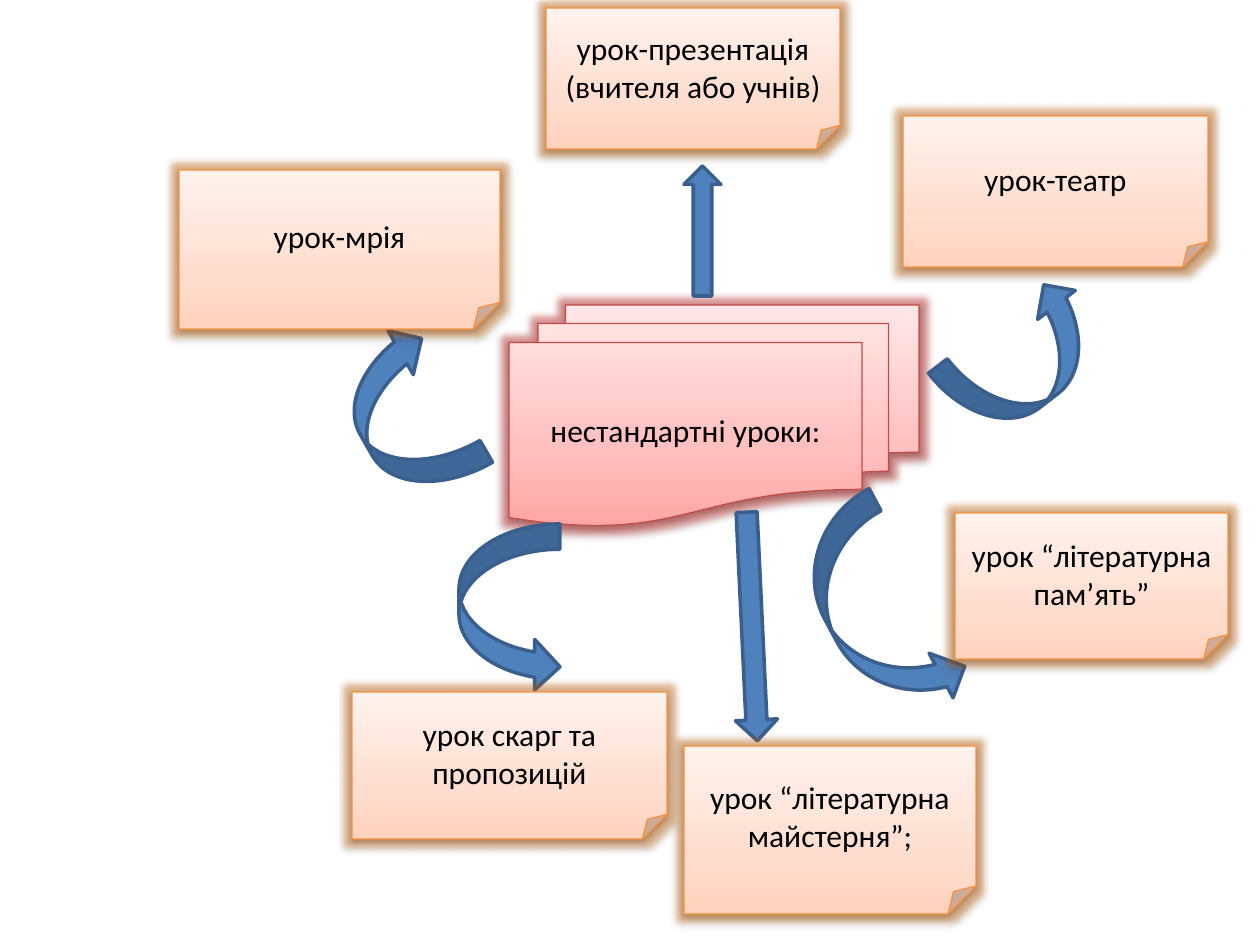
"""Builds a slide mapping the kinds of non-standard lessons around a central title."""
from lxml import etree
from pptx import Presentation
from pptx import util as u
from pptx.dml.color import RGBColor
from pptx.enum import shapes, text
from pptx.oxml import ns

SCALE = 914400 / 126
KIND = shapes.MSO_SHAPE
COLORS = {
    "text": "000000",
    "arrow": "4F81BD",
    "arrow_line": "3A5F8C",
    "title_line": "BF4C48",
    "title_glow": "C8201C",
    "note_line": "F69240",
    "note_glow": "D26A0A",
    "shadow": "000000",
}
GRADIENTS = {
    "title": ((0, "FFA6A5"), (35, "FFC0BF"), (100, "FFE7E7")),
    "note": ((0, "FFD2BD"), (35, "FFDED0"), (100, "FFF2ED")),
}


def px(length):
    return u.Emu(round(length * SCALE))


def rgb(name):
    return RGBColor.from_string(COLORS[name])


def add_color(parent, value, alpha=None):
    color = etree.SubElement(parent, ns.qn("a:srgbClr"), val=value)
    if alpha is not None:
        etree.SubElement(color, ns.qn("a:alpha"), val=str(alpha * 1000))


def write_text(shape, words, size=18, font="Calibri", color="text"):
    frame = shape.text_frame
    frame.word_wrap = True
    frame.vertical_anchor = text.MSO_ANCHOR.MIDDLE
    paragraph = frame.paragraphs[0]
    paragraph.alignment = text.PP_ALIGN.CENTER
    run = paragraph.add_run()
    run.text = words
    run.font.size = u.Pt(size)
    run.font.name = font
    run.font.color.rgb = rgb(color)


class LessonMap:
    def __init__(self, slide):
        self.slide = slide

    def outline(self, kind, box, line, width):
        shape = self.slide.shapes.add_shape(kind, *map(px, box))
        shape.line.color.rgb = rgb(line)
        shape.line.width = u.Pt(width)
        shape.shadow.inherit = False
        return shape

    def arrow(self, kind, box, rotation=0):
        shape = self.outline(kind, box, "arrow_line", 2)
        shape.fill.solid()
        shape.fill.fore_color.rgb = rgb("arrow")
        shape.rotation = rotation

    def card(self, kind, box, words, style):
        shape = self.outline(kind, box, f"{style}_line", 0.75)
        self.shade(shape, GRADIENTS[style])
        self.glow(shape, COLORS[f"{style}_glow"])
        write_text(shape, words)

    def note(self, box, words):
        self.card(KIND.FOLDED_CORNER, box, words, "note")

    def shade(self, shape, stops):
        shape.fill.gradient()
        shape.fill.gradient_angle = 90
        stop_list = shape._element.spPr.find(ns.qn("a:gradFill")).find(ns.qn("a:gsLst"))
        for old_stop in list(stop_list):
            stop_list.remove(old_stop)
        for position, value in stops:
            stop = etree.SubElement(stop_list, ns.qn("a:gs"), pos=str(position * 1000))
            add_color(stop, value)

    def glow(self, shape, value):
        effects = shape._element.spPr.find(ns.qn("a:effectLst"))
        halo = etree.SubElement(effects, ns.qn("a:glow"), rad=str(u.Pt(8)))
        add_color(halo, value, 40)
        shadow = etree.SubElement(
            effects, ns.qn("a:outerShdw"), blurRad=str(u.Pt(3.1)),
            dist=str(u.Pt(1.6)), dir="5400000", rotWithShape="0")
        add_color(shadow, COLORS["shadow"], 38)


def main():
    presentation = Presentation()
    presentation.slide_width = px(1260)
    presentation.slide_height = px(945)
    lessons = LessonMap(presentation.slides.add_slide(presentation.slide_layouts[6]))

    lessons.card(KIND.FLOWCHART_MULTIDOCUMENT, (509, 305, 410, 221),
                 "нестандартні уроки:", "title")
    for kind, box, rotation in (
        (KIND.DOWN_ARROW, (684, 166, 37, 130), 180),
        (KIND.CURVED_UP_ARROW, (940, 312, 169, 95), 322.5),
        (KIND.CURVED_DOWN_ARROW, (323, 364, 168, 101), 240.2),
        (KIND.CURVED_RIGHT_ARROW, (459, 524, 101, 168), 0),
        (KIND.DOWN_ARROW, (731, 512, 42, 229), 357.3),
    ):
        lessons.arrow(kind, box, rotation)
    for box, words in (
        ((546, 8, 294, 141), "урок-презентація (вчителя або учнів)"),
        ((179, 170, 321, 159), "урок-мрія"),
        ((903, 116, 305, 151), "урок-театр"),
        ((352, 692, 315, 147), "урок скарг та пропозицій"),
        ((684, 746, 292, 168), "урок “літературна майстерня”;"),
    ):
        lessons.note(box, words)
    lessons.arrow(KIND.CURVED_RIGHT_ARROW, (828, 499, 101, 227), 331.7)
    lessons.note((955, 513, 273, 146), "урок “літературна пам’ять”")

    presentation.save("out.pptx")


if __name__ == "__main__":
    main()
